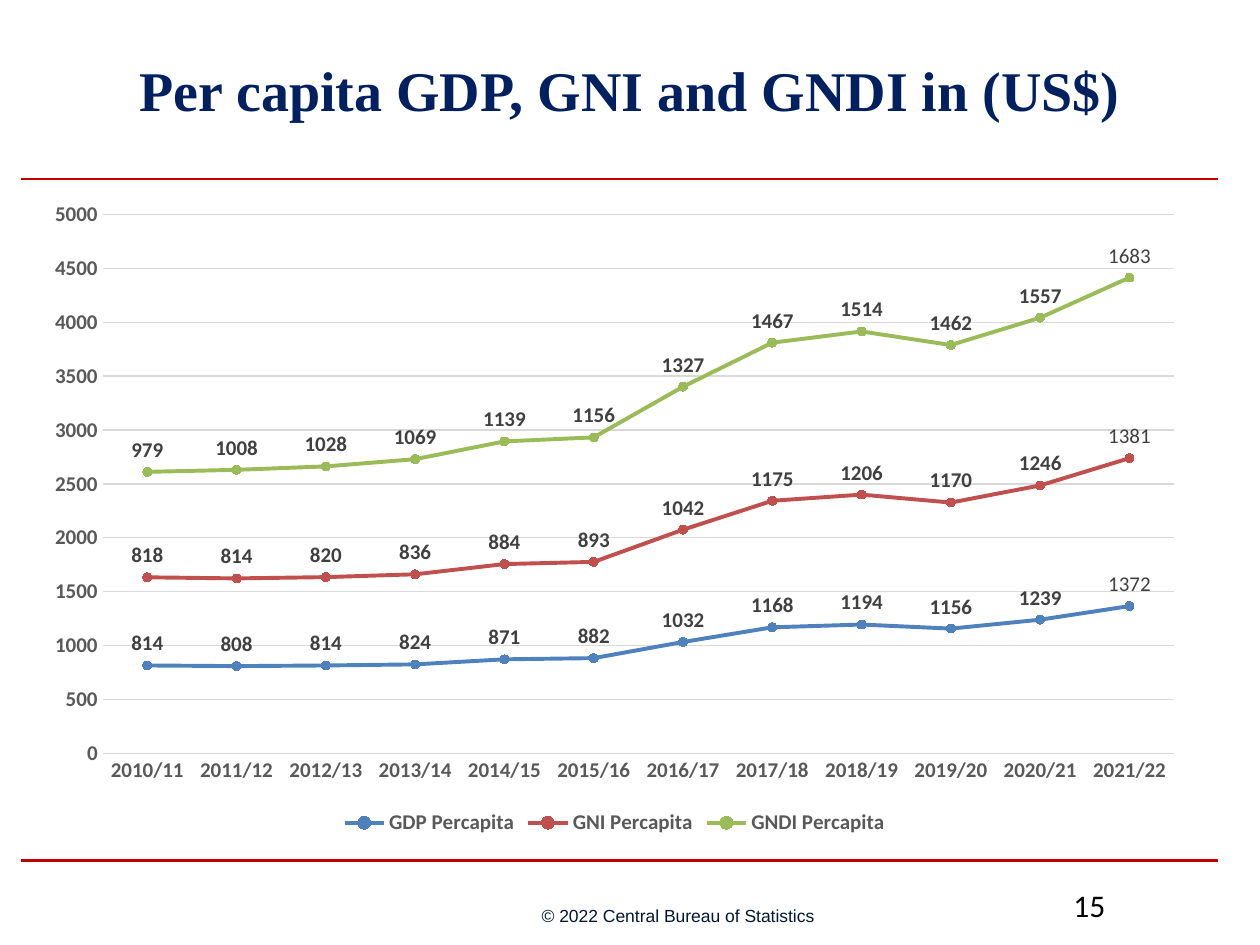
from lxml.etree import SubElement
from pptx import Presentation
from pptx.chart.data import CategoryChartData
from pptx.dml.color import RGBColor
from pptx.enum.chart import (XL_CHART_TYPE, XL_LABEL_POSITION, XL_LEGEND_POSITION,
                             XL_MARKER_STYLE, XL_TICK_MARK)
from pptx.enum.shapes import MSO_CONNECTOR
from pptx.enum.text import MSO_ANCHOR, PP_ALIGN
from pptx.oxml.ns import qn
from pptx.util import Cm, Pt

COLORS = {
    "rule": "C00000",
    "title": "002060",
    "footer": "031735",
    "black": "000000",
    "axis_text": "595959",
    "label_text": "404040",
    "grid": "D9D9D9",
    "gdp": "4F81BD",
    "gni": "C0504D",
    "gndi": "9BBB59",
}

YEARS = [f"{year}/{year - 1999}" for year in range(2010, 2022)]

SERIES = [
    ("GDP Percapita", "gdp", "1372",
     [814, 808, 814, 824, 871, 882, 1032, 1168, 1194, 1156, 1239, 1365]),
    ("GNI Percapita", "gni", "1381",
     [818, 814, 820, 836, 884, 893, 1042, 1175, 1206, 1170, 1246, 1373]),
    ("GNDI Percapita", "gndi", "1683",
     [979, 1008, 1028, 1069, 1139, 1156, 1327, 1467, 1514, 1462, 1557, 1676]),
]


def color(name):
    return RGBColor.from_string(COLORS[name])


def style_font(font, name, size, color_name, bold=False):
    font.name = name
    font.size = Pt(size)
    font.bold = bold
    font.color.rgb = color(color_name)


def style_line(line, color_name, width):
    line.color.rgb = color(color_name)
    line.width = Pt(width)


def add_rule(page, top):
    rule = page.shapes.add_connector(
        MSO_CONNECTOR.STRAIGHT, Cm(0.43), Cm(top), Cm(24.56), Cm(top))
    style_line(rule.line, "rule", 1.5)
    SubElement(rule._element.spPr, qn("a:effectLst"))


def add_text(page, text, left, top, width, height, font, size, color_name,
             bold=False, align=PP_ALIGN.LEFT, anchor=MSO_ANCHOR.MIDDLE, inset=None):
    box = page.shapes.add_textbox(Cm(left), Cm(top), Cm(width), Cm(height))
    frame = box.text_frame
    frame.word_wrap = True
    frame.vertical_anchor = anchor
    if inset is not None:
        frame.margin_left = frame.margin_right = Cm(inset)
        frame.margin_top = frame.margin_bottom = Cm(inset)
    frame.text = text
    para = frame.paragraphs[0]
    para.alignment = align
    style_font(para.runs[0].font, font, size, color_name, bold)


def style_axes(chart):
    for axis in (chart.category_axis, chart.value_axis):
        axis.major_tick_mark = XL_TICK_MARK.NONE
        axis.minor_tick_mark = XL_TICK_MARK.NONE
        style_font(axis.tick_labels.font, "Calibri", 12, "axis_text", True)
    style_line(chart.category_axis.format.line, "grid", 0.75)
    values = chart.value_axis
    values.minimum_scale = 0
    values.maximum_scale = 5000
    values.major_unit = 500
    values.format.line.fill.background()
    values.tick_labels.number_format = "0"
    values.tick_labels.number_format_is_linked = False
    style_line(values.major_gridlines.format.line, "grid", 0.75)


def style_series(series, color_name, last_label):
    series.smooth = False
    style_line(series.format.line, color_name, 2.25)
    marker = series.marker
    marker.style = XL_MARKER_STYLE.CIRCLE
    marker.size = 5
    marker.format.fill.solid()
    marker.format.fill.fore_color.rgb = color(color_name)
    marker.format.line.color.rgb = color(color_name)

    labels = series.data_labels
    labels.show_value = True
    labels.position = XL_LABEL_POSITION.ABOVE
    labels.number_format = "0"
    labels.number_format_is_linked = False
    style_font(labels.font, "Calibri", 12, "label_text", True)

    label = series.points[len(YEARS) - 1].data_label
    label.text_frame.text = last_label
    span = label.text_frame.paragraphs[0].runs[0]
    style_font(span.font, "Calibri", 12, "label_text")
    label.position = XL_LABEL_POSITION.ABOVE


def add_income_chart(page):
    data = CategoryChartData(number_format="0")
    data.categories = YEARS
    for name, _, _, values in SERIES:
        data.add_series(name, values)
    chart = page.shapes.add_chart(
        XL_CHART_TYPE.LINE_MARKERS_STACKED,
        Cm(0.64), Cm(3.81), Cm(23.5), Cm(13.13), data).chart
    style_font(chart.font, "Calibri", 10, "black")
    chart.has_title = False
    chart.has_legend = True
    chart.legend.position = XL_LEGEND_POSITION.BOTTOM
    chart.legend.include_in_layout = False
    style_font(chart.legend.font, "Calibri", 12, "axis_text", True)
    style_axes(chart)
    plot = chart.plots[0]
    plot.vary_by_categories = False
    for series, (_, color_name, last_label, _) in zip(plot.series, SERIES):
        style_series(series, color_name, last_label)


def main():
    deck = Presentation()
    deck.slide_width = Cm(25.4)
    deck.slide_height = Cm(19.05)
    page = deck.slides.add_slide(deck.slide_layouts[6])

    for top in (3.61, 17.35):
        add_rule(page, top)
    add_text(page, "© 2022 Central Bureau of Statistics", 10.92, 18.21, 5.59, 0.48,
             "Arial", 10, "footer", inset=0)
    add_text(page, "Per capita GDP, GNI and GNDI in (US$)", 1.27, 0.48, 22.86, 2.62,
             "Times New Roman", 32, "title", bold=True, align=PP_ALIGN.CENTER)
    add_income_chart(page)
    add_text(page, "15", 21.39, 17.73, 3.38, 0.58, "Calibri", 18, "black",
             anchor=MSO_ANCHOR.TOP)

    deck.save("out.pptx")


if __name__ == "__main__":
    main()
